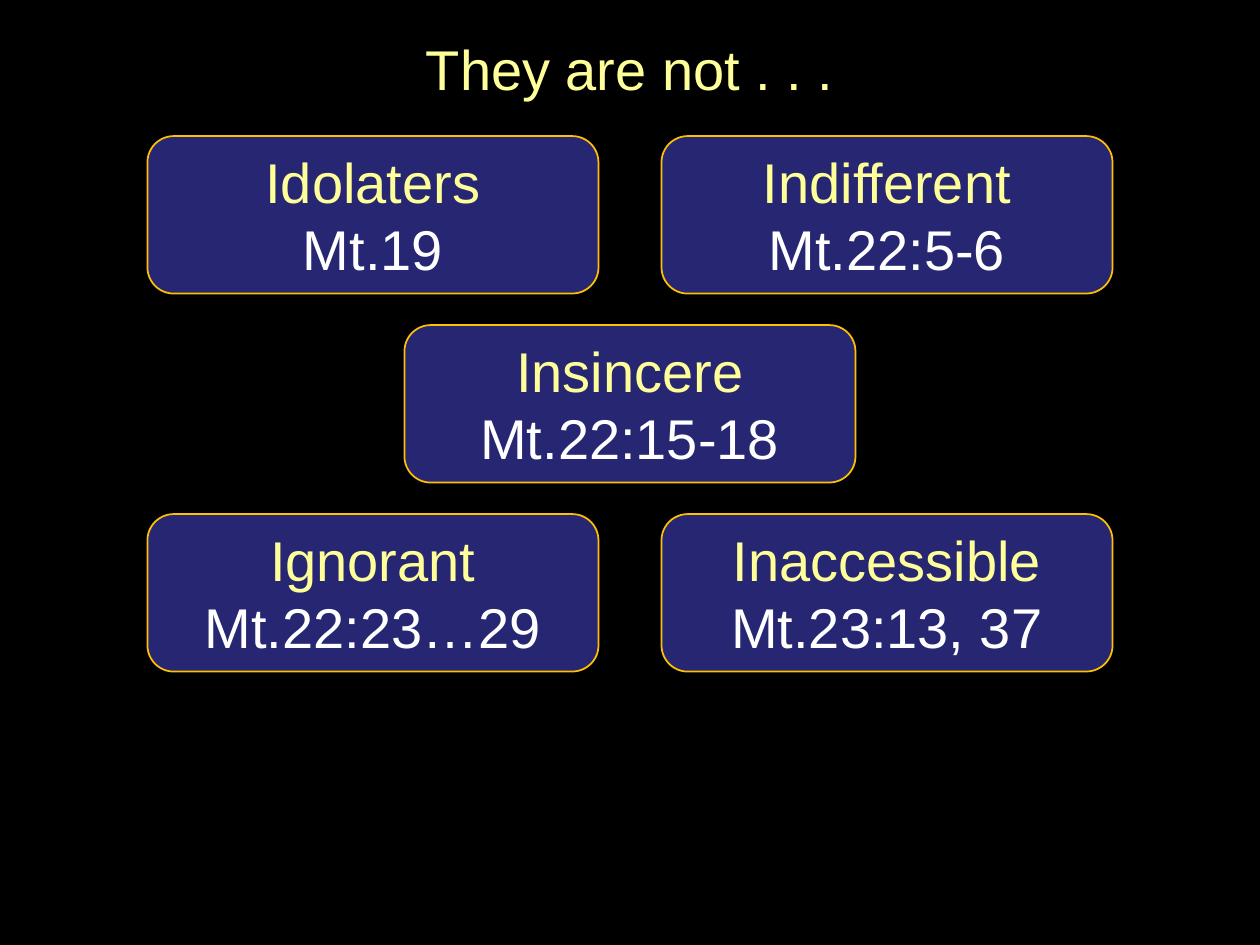
import pptx
import pptx.dml.color
import pptx.enum.shapes
import pptx.enum.text
import pptx.util

Inches = pptx.util.Inches
SHAPE = pptx.enum.shapes.MSO_SHAPE
BLACK, NAVY, GOLD = "000000", "262673", "FFC000"
YELLOW, WHITE = "FFFF99", "FFFFFF"
WIDTH, HEIGHT = 3.58, 1.25
LEFT, MIDDLE, RIGHT = 1.17, 3.21, 5.25
TOP, STEP = 1.08, 1.5
CARDS = [
    (LEFT, 0, "Idolaters", "Mt.19"),
    (RIGHT, 0, "Indifferent", "Mt.22:5-6"),
    (MIDDLE, 1, "Insincere", "Mt.22:15-18"),
    (LEFT, 2, "Ignorant", "Mt.22:23…29"),
    (RIGHT, 2, "Inaccessible", "Mt.23:13, 37"),
]


def color(value):
    return pptx.dml.color.RGBColor.from_string(value)


def add_box(slide, kind, place, fill, line, texts):
    box = slide.shapes.add_shape(kind, *map(Inches, place))
    box.shadow.inherit = False
    box.fill.solid()
    box.fill.fore_color.rgb = color(fill)
    box.line.color.rgb = color(line)
    box.line.width = pptx.util.Pt(1)
    frame = box.text_frame
    frame.vertical_anchor = pptx.enum.text.MSO_ANCHOR.MIDDLE
    frame.text = "\n".join(texts)
    for para, tint in zip(frame.paragraphs, (YELLOW, WHITE)):
        para.alignment = pptx.enum.text.PP_ALIGN.CENTER
        font = para.runs[0].font
        font.name = "Arial"
        font.size = pptx.util.Pt(32)
        font.color.rgb = color(tint)


def add_card(slide, left, row, trait, verse):
    place = (left, TOP + row * STEP, WIDTH, HEIGHT)
    add_box(slide, SHAPE.ROUNDED_RECTANGLE, place, NAVY, GOLD, [trait, verse])


def add_title(slide, text):
    place = (1.46, 0.25, 7.08, 0.58)
    add_box(slide, SHAPE.RECTANGLE, place, BLACK, BLACK, [text])


def main():
    deck = pptx.Presentation()
    deck.slide_width, deck.slide_height = Inches(10), Inches(7.5)
    slide = deck.slides.add_slide(deck.slide_layouts[6])
    slide.background.fill.solid()
    slide.background.fill.fore_color.rgb = color(BLACK)
    for card in CARDS:
        add_card(slide, *card)
    add_title(slide, "They are not . . .")
    deck.save("out.pptx")


if __name__ == "__main__":
    main()
